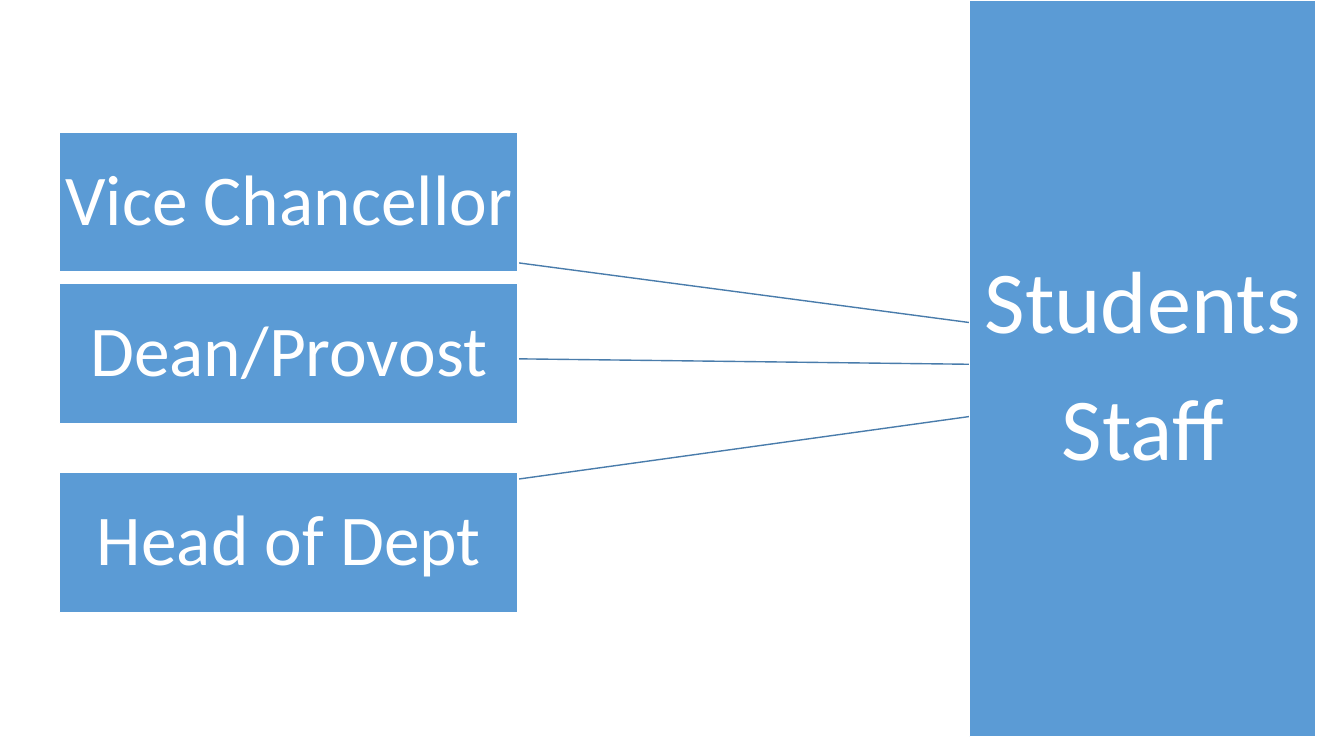
from lxml.etree import SubElement
from pptx import Presentation
from pptx.dml.color import RGBColor
from pptx.enum.shapes import MSO_CONNECTOR, MSO_SHAPE
from pptx.enum.text import MSO_ANCHOR, PP_ALIGN
from pptx.oxml.ns import qn
from pptx.util import Inches, Pt

BLUE = RGBColor(0x5B, 0x9B, 0xD5)
LINK_BLUE = RGBColor(0x49, 0x7C, 0xAB)
WHITE = RGBColor(0xFF, 0xFF, 0xFF)

SLIDE_WIDTH, SLIDE_HEIGHT = Inches(13.33), Inches(7.5)
LEFT_SIDE, RIGHT_SIDE = 1, 3

# Places as percentages of the slide's width and height
OFFICE_LEFT, OFFICE_WIDTH, OFFICE_HEIGHT = 4.43, 34.13, 18.53
OFFICES = [("Vice Chancellor", 17.47), ("Dean/Provost", 37.47), ("Head of Dept", 62.53)]
COMMUNITY = ["Students", "Staff"]
COMMUNITY_AREA = (72.12, 0, 25.81, 97.47)


def across(percent):
    return round(SLIDE_WIDTH * percent / 100)


def down(percent):
    return round(SLIDE_HEIGHT * percent / 100)


def write_text(frame, lines, size, color=WHITE, font="Calibri", gap=0.35):
    frame.word_wrap = True
    frame.vertical_anchor = MSO_ANCHOR.MIDDLE
    frame.margin_left = frame.margin_right = Inches(0.04)
    frame.margin_top = frame.margin_bottom = Inches(0.04)
    for index, line in enumerate(lines):
        paragraph = frame.add_paragraph() if index else frame.paragraphs[0]
        paragraph.alignment = PP_ALIGN.CENTER
        paragraph.line_spacing = 0.9
        if index < len(lines) - 1:
            paragraph.space_after = Pt(round(size * gap))
        run = paragraph.add_run()
        run.text = line
        run.font.name = font
        run.font.size = Pt(size)
        run.font.color.rgb = color


def add_block(slide, left, top, width, height, lines, size):
    block = slide.shapes.add_shape(
        MSO_SHAPE.RECTANGLE, across(left), down(top), across(width), down(height))
    block.shadow.inherit = False
    block.fill.solid()
    block.fill.fore_color.rgb = BLUE
    block.line.color.rgb = WHITE
    block.line.width = Pt(1)
    write_text(block.text_frame, lines, size)
    return block


def add_link(slide):
    link = slide.shapes.add_connector(MSO_CONNECTOR.STRAIGHT, 0, 0, 0, 0)
    link.line.color.rgb = LINK_BLUE
    link.line.width = Pt(1)
    SubElement(link._element.spPr, qn("a:effectLst"))
    return link


def main():
    deck = Presentation()
    deck.slide_width, deck.slide_height = SLIDE_WIDTH, SLIDE_HEIGHT
    slide = deck.slides.add_slide(deck.slide_layouts[6])

    # Links come first so that they lie behind the blocks
    links = [add_link(slide) for _ in OFFICES]

    # Students and staff
    community = add_block(slide, *COMMUNITY_AREA, COMMUNITY, size=63)

    # Offices, each linked to the far side of the community block
    for link, (title, top) in zip(links, OFFICES):
        office = add_block(
            slide, OFFICE_LEFT, top, OFFICE_WIDTH, OFFICE_HEIGHT, [title], size=51)
        link.begin_connect(community, RIGHT_SIDE)
        link.end_connect(office, LEFT_SIDE)

    deck.save("out.pptx")


if __name__ == "__main__":
    main()
